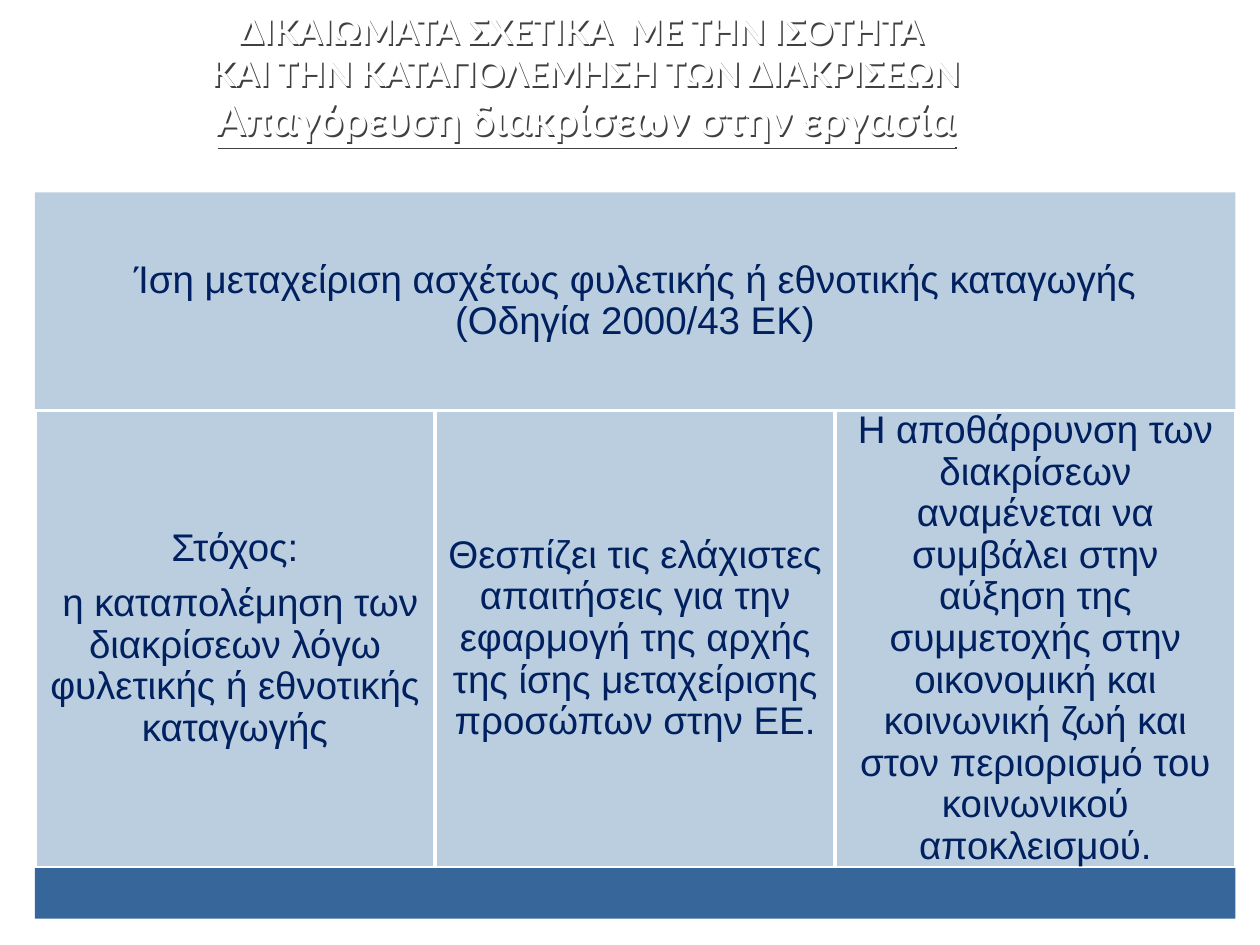
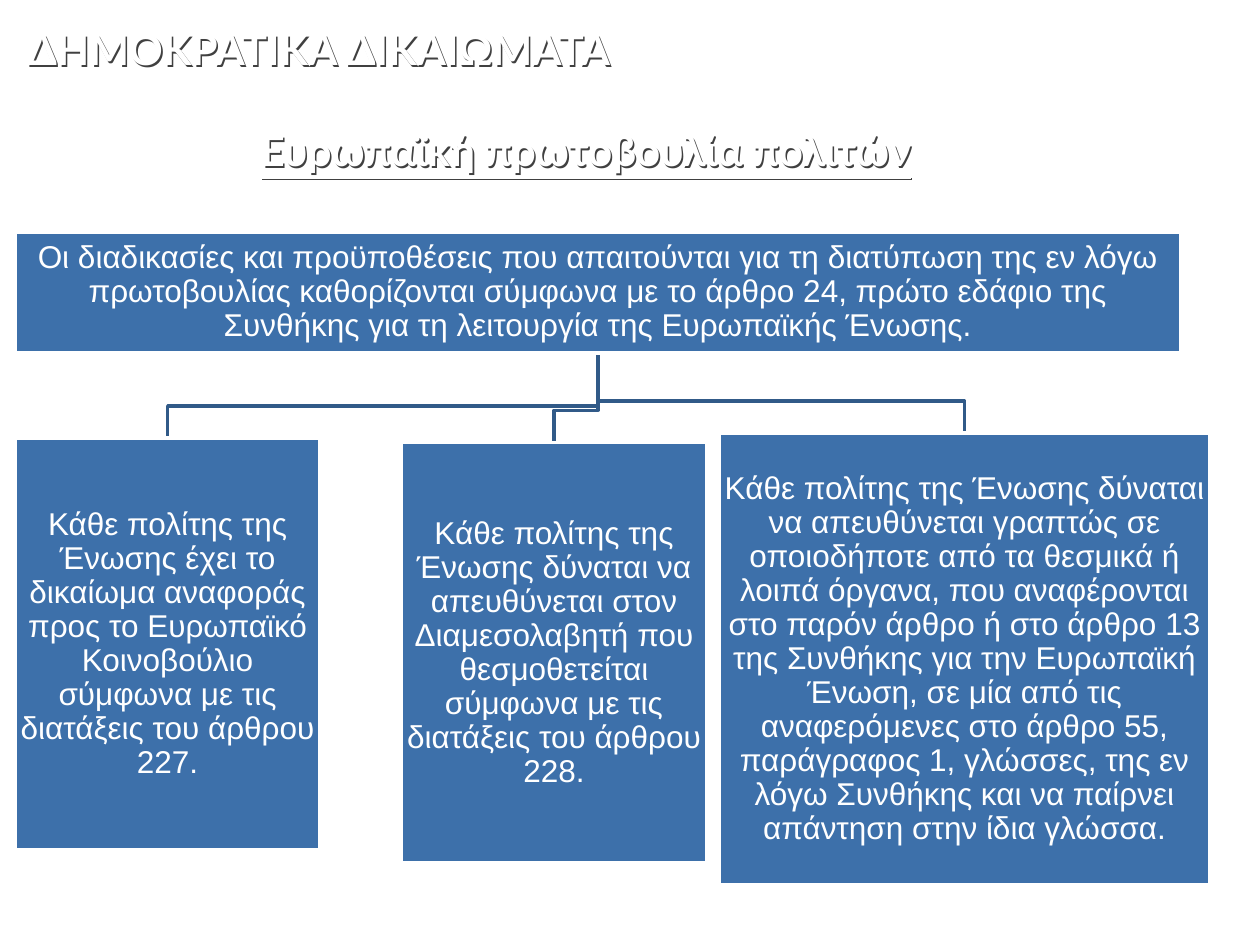
from pptx import Presentation
from pptx.dml.color import RGBColor
from pptx.enum.shapes import MSO_SHAPE as Shape
from pptx.enum.text import MSO_ANCHOR as Anchor, MSO_AUTO_SIZE as AutoSize, PP_ALIGN as Align
from pptx.oxml import parse_xml
from pptx.oxml.ns import nsdecls
from pptx.util import Pt

# Shared look
WHITE = RGBColor(0xFF, 0xFF, 0xFF)
NAVY = RGBColor(0x00, 0x20, 0x60)
PALE_BLUE = RGBColor(0xBA, 0xCE, 0xDF)
BAND_BLUE = RGBColor(0x37, 0x66, 0x9A)
BOX_BLUE = RGBColor(0x3D, 0x70, 0xAA)
LINE_BLUE = RGBColor(0x31, 0x5A, 0x88)
TITLE_FONT, BODY_FONT = "Lato", "Arial"
TITLE_LEFT, TITLE_WIDTH = 8.6, 652.3
TITLE_SHADOW = (
    f'<a:effectLst {nsdecls("a")}><a:outerShdw blurRad="0" dist="16000" dir="2700000" algn="tl">'
    '<a:srgbClr val="404040"/></a:outerShdw></a:effectLst>'
)


def write(para, text, *, size, color, font=BODY_FONT, bold=False, underline=False,
          align=Align.CENTER, line_spacing=None, before=0):
    """Fill a paragraph with text in one format."""
    para.text = text
    para.alignment = align
    para.space_before = Pt(before)
    if line_spacing:
        para.line_spacing = line_spacing
    for span in para.runs:
        span.font.size = Pt(size)
        span.font.name = font
        span.font.bold = bold
        span.font.underline = underline
        span.font.color.rgb = color


def paragraphs(frame, count):
    """Return the first paragraph and as many new ones as needed."""
    return [frame.paragraphs[0]] + [frame.add_paragraph() for _ in range(count - 1)]


def set_margins(frame, side, top):
    frame.margin_left = frame.margin_right = Pt(side)
    frame.margin_top = frame.margin_bottom = Pt(top)


def add_titled_page(deck, top, height, margin_top, lines):
    """Add a title-only page; lines are (text, format) pairs."""
    page = deck.slides.add_slide(deck.slide_layouts[5])
    title = page.shapes.title
    title.left, title.top = Pt(TITLE_LEFT), Pt(top)
    title.width, title.height = Pt(TITLE_WIDTH), Pt(height)
    title.fill.background()
    title.line.fill.background()
    title._element.spPr.append(parse_xml(TITLE_SHADOW))
    frame = title.text_frame
    frame.word_wrap = True
    frame.auto_size = AutoSize.NONE
    frame.vertical_anchor = Anchor.TOP
    set_margins(frame, 7.2, margin_top)
    for para, (text, style) in zip(paragraphs(frame, len(lines)), lines):
        write(para, text, color=WHITE, font=TITLE_FONT, bold=True, **style)
    return page


def add_box(page, area, fill, texts=(), *, size=18, color=WHITE, margin=0, outlined=True):
    """Add a filled rectangle with centred text; area is left, top, width, height."""
    box = page.shapes.add_shape(Shape.RECTANGLE, *map(Pt, area))
    box.shadow.inherit = False
    box.fill.solid()
    box.fill.fore_color.rgb = fill
    if outlined:
        box.line.color.rgb = WHITE
        box.line.width = Pt(2)
    else:
        box.line.fill.background()
    frame = box.text_frame
    frame.word_wrap = True
    frame.vertical_anchor = Anchor.MIDDLE
    set_margins(frame, margin, margin)
    for index, (para, text) in enumerate(zip(paragraphs(frame, len(texts)), texts)):
        write(para, text, size=size, color=color, line_spacing=0.9, before=7.7 if index else 0)


def add_branch(page, root, child):
    """Draw an elbow line from the root's bottom centre to the child's top centre."""
    start_x, start_y = root[0] + root[2] / 2, root[1] + root[3]
    end_x, end_y = child[0] + child[2] / 2, child[1]
    knee_y = end_y - 18.4
    path = page.shapes.build_freeform(Pt(start_x), Pt(start_y))
    corners = [(start_x, knee_y), (end_x, knee_y), (end_x, end_y)]
    path.add_line_segments([(Pt(x), Pt(y)) for x, y in corners], close=False)
    branch = path.convert_to_shape()
    branch.shadow.inherit = False
    branch.fill.background()
    branch.line.color.rgb = LINE_BLUE
    branch.line.width = Pt(2)


def build_equality_page(deck):
    page = add_titled_page(deck, 5.5, 94.5, 0, [
        ("ΔΙΚΑΙΩΜΑΤΑ ΣΧΕΤΙΚΑ  ΜΕ ΤΗΝ ΙΣΟΤΗΤΑ ", {"size": 20}),
        ("ΚΑΙ ΤΗΝ ΚΑΤΑΠΟΛΕΜΗΣΗ ΤΩΝ ΔΙΑΚΡΙΣΕΩΝ", {"size": 20}),
        ("Απαγόρευση διακρίσεων στην εργασία", {"size": 24, "underline": True}),
    ])
    left, column_width = 19.9, 228.7
    full_width = 3 * column_width
    style = {"size": 22, "color": NAVY, "margin": 6.5}

    # Heading band
    heading = "Ίση μεταχείριση ασχέτως φυλετικής ή εθνοτικής καταγωγής\v(Οδηγία 2000/43 ΕΚ)"
    add_box(page, (left, 110, full_width, 124.5), PALE_BLUE, [heading], outlined=False, **style)

    # Three columns
    columns = [
        ["Στόχος:", " η καταπολέμηση των διακρίσεων λόγω φυλετικής ή εθνοτικής καταγωγής"],
        ["Θεσπίζει τις ελάχιστες απαιτήσεις για την εφαρμογή της αρχής της ίσης "
         "μεταχείρισης προσώπων στην ΕΕ."],
        ["Η αποθάρρυνση των διακρίσεων αναμένεται να συμβάλει στην αύξηση της συμμετοχής "
         "στην οικονομική και κοινωνική ζωή και στον περιορισμό του κοινωνικού αποκλεισμού."],
    ]
    for index, texts in enumerate(columns):
        area = (left + index * column_width, 234.5, column_width, 261.4)
        add_box(page, area, PALE_BLUE, texts, **style)

    # Base band
    add_box(page, (left, 496, full_width, 29), BAND_BLUE, outlined=False)


def build_initiative_page(deck):
    page = add_titled_page(deck, 0, 111.6, 13.6, [
        ("ΔΗΜΟΚΡΑΤΙΚΑ ΔΙΚΑΙΩΜΑΤΑ", {"size": 24, "align": Align.LEFT}),
        ("Ευρωπαϊκή πρωτοβουλία πολιτών", {"size": 24, "underline": True, "before": 29}),
    ])
    root = (8.6, 132.5, 666, 69.4)
    root_text = (
        "Οι διαδικασίες και προϋποθέσεις που απαιτούνται για τη διατύπωση της εν λόγω "
        "πρωτοβουλίας καθορίζονται σύμφωνα με το άρθρο 24, πρώτο εδάφιο της Συνθήκης για "
        "τη λειτουργία της Ευρωπαϊκής Ένωσης."
    )
    rights = [
        ((8.6, 250.4, 174.4, 235.4),
         "Κάθε πολίτης της Ένωσης έχει το δικαίωμα αναφοράς προς το Ευρωπαϊκό Κοινοβούλιο "
         "σύμφωνα με τις διατάξεις του άρθρου 227."),
        ((229.4, 252.9, 174.4, 240.4),
         "Κάθε πολίτης της Ένωσης δύναται να απευθύνεται στον Διαμεσολαβητή που "
         "θεσμοθετείται σύμφωνα με τις διατάξεις του άρθρου 228."),
        ((411, 247.5, 280.4, 258.3),
         "Κάθε πολίτης της Ένωσης δύναται να απευθύνεται γραπτώς σε οποιοδήποτε από τα "
         "θεσμικά ή λοιπά όργανα, που αναφέρονται στο παρόν άρθρο ή στο άρθρο 13 της "
         "Συνθήκης για την Ευρωπαϊκή Ένωση, σε μία από τις αναφερόμενες στο άρθρο 55, "
         "παράγραφος 1, γλώσσες, της εν λόγω Συνθήκης και να παίρνει απάντηση στην ίδια "
         "γλώσσα."),
    ]

    # Branches lie behind the boxes
    for area, _ in reversed(rights):
        add_branch(page, root, area)
    for area, text in [(root, root_text), *rights]:
        add_box(page, area, BOX_BLUE, [text], margin=0.9)


def main():
    deck = Presentation()
    deck.slide_width, deck.slide_height = Pt(720), Pt(540)
    build_equality_page(deck)
    build_initiative_page(deck)
    deck.save("out.pptx")


if __name__ == "__main__":
    main()
